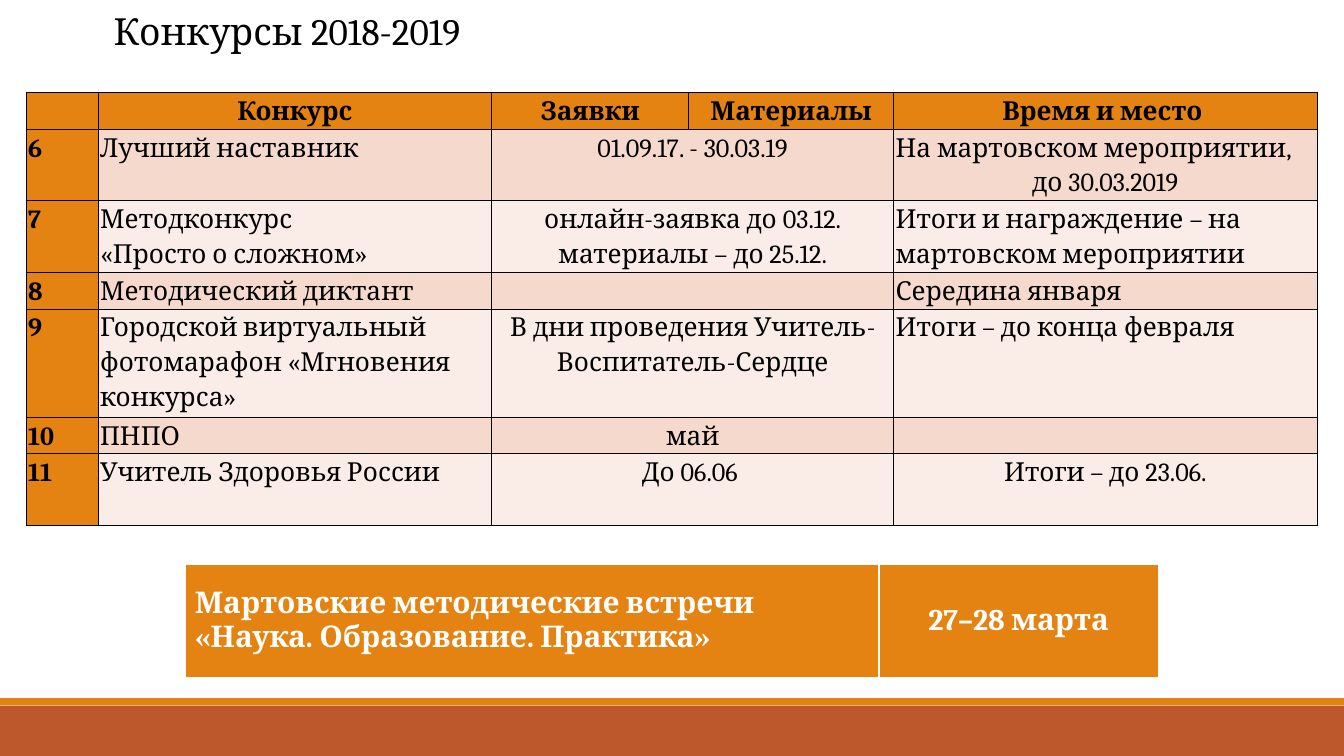
from dataclasses import dataclass

import lxml.etree
import pptx
import pptx.dml.color
import pptx.enum.shapes
import pptx.enum.text
import pptx.oxml.ns
import pptx.util

RGBColor = pptx.dml.color.RGBColor
Align = pptx.enum.text.PP_ALIGN
Anchor = pptx.enum.text.MSO_ANCHOR
qn = pptx.oxml.ns.qn

PX = 4572
FONT = "Cambria"
BLACK = RGBColor(0x00, 0x00, 0x00)
WHITE = RGBColor(0xFF, 0xFF, 0xFF)
ORANGE = RGBColor(0xE4, 0x83, 0x12)
RUST = RGBColor(0xBD, 0x58, 0x2C)
PINK = RGBColor(0xF5, 0xD9, 0xCC)
PALE = RGBColor(0xFA, 0xED, 0xE7)


@dataclass(frozen=True)
class Box:
    left: int
    top: int
    width: int
    height: int

    def emu(self) -> tuple[int, ...]:
        return tuple(v * PX for v in (self.left, self.top, self.width, self.height))


@dataclass(frozen=True)
class Band:
    box: Box
    color: RGBColor


@dataclass(frozen=True)
class Line:
    text: str
    centered: bool = False


@dataclass(frozen=True)
class Contest:
    number: str
    name: tuple[Line, ...]
    term: tuple[Line, ...]
    place: tuple[Line, ...]
    height: int


@dataclass(frozen=True)
class CellStyle:
    size: int
    color: RGBColor
    inset: int
    spacing: float
    anchor: Anchor
    border: RGBColor
    side_width: float
    edge_width: float


BANDS = [Band(Box(0, 1050, 2000, 75), RUST), Band(Box(0, 1039, 2000, 11), ORANGE)]
GRID = CellStyle(14, BLACK, 3, 1.15, Anchor.TOP, BLACK, 0.5, 0.5)
BANNER = CellStyle(16, WHITE, 14, 1.0, Anchor.MIDDLE, WHITE, 1, 3)
HEADERS = ["", "Конкурс", "Заявки", "Материалы", "Время и место "]
CONTESTS = [
    Contest("6", (Line("Лучший наставник"),), (Line("01.09.17. - 30.03.19", True),),
            (Line("На мартовском мероприятии,"), Line("до 30.03.2019", True)), 107),
    Contest("7", (Line("Методконкурс"), Line("«Просто о сложном»")),
            (Line("онлайн-заявка до 03.12.", True), Line("материалы – до 25.12.", True)),
            (Line("Итоги и награждение – на мартовском мероприятии"),), 107),
    Contest("8", (Line("Методический диктант"),), (Line(""),), (Line("Середина января"),), 54),
    Contest("9", (Line("Городской виртуальный фотомарафон «Мгновения конкурса»"),),
            (Line("В дни проведения Учитель-Воспитатель-Сердце", True),),
            (Line("Итоги – до конца февраля"),), 161),
    Contest("10", (Line("ПНПО"),), (Line("май", True),), (Line(""),), 54),
    Contest("11", (Line("Учитель Здоровья России"),), (Line("До 06.06 ", True),),
            (Line("Итоги – до 23.06.", True),), 107),
]


def add_band(s, band: Band) -> None:
    sp = s.shapes.add_shape(pptx.enum.shapes.MSO_SHAPE.RECTANGLE, *band.box.emu())
    sp.shadow.inherit = False
    sp.fill.solid()
    sp.fill.fore_color.rgb = band.color
    sp.line.fill.background()


def add_title(s, text: str, box: Box) -> None:
    sp = s.shapes.title
    sp.left, sp.top, sp.width, sp.height = box.emu()
    tf = sp.text_frame
    tf.text = text
    tf.word_wrap = False
    tf.vertical_anchor = Anchor.MIDDLE
    p = tf.paragraphs[0]
    p.alignment = Align.LEFT
    font = p.runs[0].font
    font.name, font.size = FONT, pptx.util.Pt(20)
    font.color.rgb = BLACK


def add_table(s, box: Box, cols: list[int], rows: list[int]):
    table = s.shapes.add_table(len(rows), len(cols), *box.emu()).table
    table.first_row = table.horz_banding = False
    for column, width in zip(table.columns, cols):
        column.width = width * PX
    for row, height in zip(table.rows, rows):
        row.height = height * PX
    return table


def set_borders(cell, style: CellStyle) -> None:
    tc_pr = cell._tc.get_or_add_tcPr()
    for i, side in enumerate("LRTB"):
        width = style.side_width if side in "LR" else style.edge_width
        ln = lxml.etree.Element(qn(f"a:ln{side}"), w=str(pptx.util.Pt(width)))
        fill = lxml.etree.SubElement(ln, qn("a:solidFill"))
        lxml.etree.SubElement(fill, qn("a:srgbClr"), val=str(style.border))
        tc_pr.insert(i, ln)


def fill_cell(cell, lines: tuple[Line, ...], fill: RGBColor, style: CellStyle,
              bold: bool = False) -> None:
    cell.fill.solid()
    cell.fill.fore_color.rgb = fill
    cell.margin_left = cell.margin_right = style.inset * PX
    cell.margin_top = cell.margin_bottom = 0
    cell.vertical_anchor = style.anchor
    set_borders(cell, style)
    tf = cell.text_frame
    tf.text = "\n".join(line.text for line in lines)
    for p, line in zip(tf.paragraphs, lines):
        p.alignment = Align.CENTER if line.centered else Align.LEFT
        p.line_spacing = style.spacing
        for r in p.runs:
            r.font.name, r.font.size, r.font.bold = FONT, pptx.util.Pt(style.size), bold
            r.font.color.rgb = style.color
        if not line.text:
            end = lxml.etree.SubElement(p._p, qn("a:endParaRPr"), sz=str(style.size * 100))
            lxml.etree.SubElement(end, qn("a:latin"), typeface=FONT)


def add_contests(s, box: Box) -> None:
    rows = [54] + [contest.height for contest in CONTESTS]
    table = add_table(s, box, [107, 586, 293, 305, 630], rows)
    for i, header in enumerate(HEADERS):
        fill_cell(table.cell(0, i), (Line(header, True),), ORANGE, GRID, True)
    for i, contest in enumerate(CONTESTS, 1):
        fill = PINK if i % 2 else PALE
        fill_cell(table.cell(i, 0), (Line(contest.number),), ORANGE, GRID, True)
        contents = (contest.name, contest.term, (Line(""),), contest.place)
        for j, lines in enumerate(contents, 1):
            fill_cell(table.cell(i, j), lines, fill, GRID)
        table.cell(i, 2).merge(table.cell(i, 3))


def add_banner(s, box: Box) -> None:
    table = add_table(s, box, [1032, 416], [box.height])
    event = (Line("Мартовские методические встречи"), Line("«Наука. Образование. Практика»"))
    for i, lines in enumerate((event, (Line("27–28 марта", True),))):
        fill_cell(table.cell(0, i), lines, ORANGE, BANNER, True)


def main() -> None:
    prs = pptx.Presentation()
    prs.slide_width, prs.slide_height = 2000 * PX, 1125 * PX
    s = prs.slides.add_slide(prs.slide_layouts[5])
    for band in BANDS:
        add_band(s, band)
    add_title(s, "Конкурсы 2018-2019", Box(149, 1, 582, 88))
    add_contests(s, Box(39, 138, 1921, 644))
    add_banner(s, Box(276, 837, 1448, 174))
    prs.save("out.pptx")


if __name__ == "__main__":
    main()
